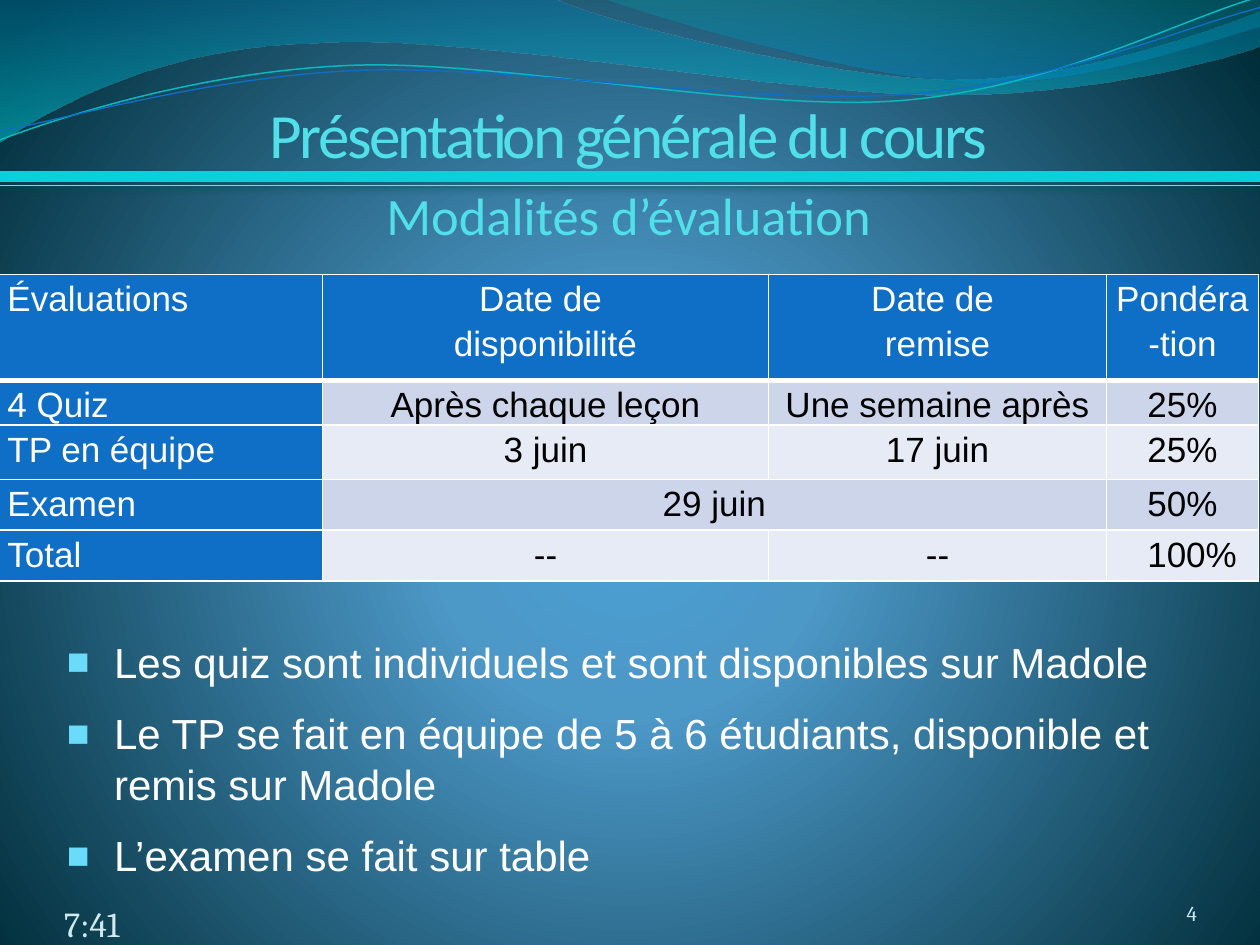
from lxml.etree import SubElement
from pptx import Presentation
from pptx.dml.color import RGBColor
from pptx.enum.shapes import MSO_CONNECTOR
from pptx.enum.text import MSO_ANCHOR as Anchor, MSO_AUTO_SIZE as AutoSize, PP_ALIGN as Align
from pptx.oxml.ns import qn
from pptx.util import Pt

WHITE = RGBColor(0xFF, 0xFF, 0xFF)
BLACK = RGBColor(0x00, 0x00, 0x00)
BLUE = RGBColor(0x0F, 0x6F, 0xC6)
BAND_DARK = RGBColor(0xCC, 0xD5, 0xEA)
BAND_LIGHT = RGBColor(0xE7, 0xEB, 0xF5)
TITLE = RGBColor(0x51, 0xE0, 0xEA)
FOOTER = RGBColor(0xD1, 0xEA, 0xEE)
BULLET = RGBColor(0x6B, 0xDB, 0xFA)
CYAN = RGBColor(0x0B, 0xD0, 0xD9)
PALE_CYAN = RGBColor(0x77, 0xD9, 0xE8)
TEAL = RGBColor(0x0A, 0xB8, 0xBF)
SHADOW = RGBColor(0x02, 0x4B, 0x4E)
SKY = RGBColor(0x4A, 0xA0, 0xD6)
SKY_MID = RGBColor(0x4C, 0x98, 0xC7)
NIGHT = RGBColor(0x00, 0x2C, 0x38)
WAVE_BLUE = RGBColor(0x00, 0x74, 0xA1)
WAVE_CYAN = RGBColor(0x00, 0xC6, 0xCF)
CREST_TEAL = RGBColor(0x00, 0xA1, 0xA9)
CREST_BLUE = RGBColor(0x00, 0x8B, 0xBF)

# Wave outlines in inches: two numbers make a straight step, six a Bézier curve.
WAVE = [(0, 0), (4.4, -0.01), (4.76, 0.17, 6.64, 0.63, 7.58, 0.63),
        (8.53, 0.63, 9.58, 0.26, 10, 0.09), (10.01, 0.36),
        (9.83, 0.44, 8.7, 0.76, 7.46, 0.75), (6.22, 0.75, 3.82, 0.28, 2.57, 0.34),
        (1.29, 0.36, 0.46, 0.83, -0.01, 1.13)]
CREST = [(4.79, -0.01), (5.09, 0.11, 6.82, 0.62, 7.69, 0.65),
         (8.56, 0.69, 9.61, 0.32, 10, 0.21), (10, 0)]
TEAL_CURVE = [(0, 1.11), (0.48, 0.93, 1.58, 0.57, 2.77, 0.52),
              (3.95, 0.47, 5.93, 0.89, 7.13, 0.8), (8.33, 0.71, 9.38, 0.15, 9.98, -0.02)]
BLUE_CURVE = [(0, 1.04), (0.47, 0.96, 1.64, 0.61, 2.83, 0.56),
              (4.03, 0.51, 5.97, 0.84, 7.17, 0.75), (8.36, 0.67, 9.41, 0.21, 10, 0.06)]

COLUMNS = [185, 255, 193, 87]
ROWS = [60.5, 25.5, 31, 29, 29]
CELLS = [
    ["Évaluations", "Date de \ndisponibilité", "Date de \nremise", "Pondéra-tion"],
    ["4 Quiz", "Après chaque leçon", "Une semaine après", "25%"],
    ["TP en équipe", "3 juin", "17 juin", "25%"],
    ["Examen", "29 juin", "", "50%"],
    ["Total", "--", "--", "100%"],
]
NOTES = ["Les quiz sont individuels et sont disponibles sur Madole",
         "Le TP se fait en équipe de 5 à 6 étudiants, disponible et remis sur Madole",
         "L’examen se fait sur table"]


def add_xml(parent, tag, **attributes):
    return SubElement(parent, qn(tag), {key: str(value) for key, value in attributes.items()})


def add_gradient(parent, stops):
    """Append a gradient of (position %, colour, opacity %) stops."""
    gradient = add_xml(parent, "a:gradFill", rotWithShape=1)
    stop_list = add_xml(gradient, "a:gsLst")
    for position, color, opacity in stops:
        stop = add_xml(stop_list, "a:gs", pos=position * 1000)
        add_xml(add_xml(stop, "a:srgbClr", val=color), "a:alpha", val=opacity * 1000)
    return gradient


def bend(shape, outline):
    """Join each three straight steps that stand for a curve into one Bézier step."""
    steps = iter(list(shape._element.iter(qn("a:lnTo"))))
    for part in outline[1:]:
        first = next(steps)
        if len(part) == 6:
            first.tag = qn("a:cubicBezTo")
            for step in (next(steps), next(steps)):
                first.append(step[0])
                step.getparent().remove(step)


def write_text(frame, text, *, size, font="Arial", color=WHITE, align=Align.LEFT,
               anchor=Anchor.TOP, line_spacing=None, tracking=None):
    """Write one paragraph per line of text."""
    frame.word_wrap = True
    frame.vertical_anchor = anchor
    for index, line in enumerate(text.split("\n")):
        para = frame.paragraphs[0] if index == 0 else frame.add_paragraph()
        para.alignment = align
        para.space_before = para.space_after = Pt(0)
        para.line_spacing = line_spacing
        span = para.add_run()
        span.text = line
        span.font.size, span.font.name = Pt(size), font
        span.font.color.rgb = color
        if tracking is not None:
            span.font._element.set("spc", str(round(tracking * 100)))


class SlideBuilder:
    def __init__(self, page):
        self.page = page

    def background(self, stops):
        self.page.background.fill.solid()
        properties = self.page._element.find(".//" + qn("p:bgPr"))
        gradient = add_gradient(properties, stops)
        focus = add_xml(gradient, "a:path", path="circle")
        add_xml(focus, "a:fillToRect", l=10000, t=110000, r=10000, b=100000)
        properties.replace(properties.find(qn("a:solidFill")), gradient)

    def _outline(self, outline, closed):
        points = [(Pt(part[i] * 72), Pt(part[i + 1] * 72))
                  for part in outline for i in range(0, len(part), 2)]
        builder = self.page.shapes.build_freeform(*points[0])
        builder.add_line_segments(points[1:], close=closed)
        shape = builder.convert_to_shape()
        bend(shape, outline)
        shape.shadow.inherit = False
        shape.fill.background()
        return shape

    def wave(self, outline, stops):
        shape = self._outline(outline, True)
        shape.line.fill.background()
        properties = shape._element.spPr
        gradient = add_gradient(properties, stops)
        add_xml(gradient, "a:lin", ang=5400000, scaled=1)
        properties.replace(properties.find(qn("a:noFill")), gradient)

    def curve(self, outline, color, width):
        line = self._outline(outline, False).line
        line.color.rgb, line.width = color, Pt(width)

    def rule(self, y, color, width, shadow=None):
        line = self.page.shapes.add_connector(MSO_CONNECTOR.STRAIGHT, 0, Pt(y), Pt(720), Pt(y))
        line.line.color.rgb, line.line.width = color, Pt(width)
        effects = add_xml(line._element.spPr, "a:effectLst")
        if shadow is not None:
            outer = add_xml(effects, "a:outerShdw", blurRad=Pt(4.5), dist=Pt(3),
                            dir=5400000, algn="t", rotWithShape=0)
            add_xml(add_xml(outer, "a:srgbClr", val=shadow), "a:alpha", val=48000)

    def place(self, box, left, top, width, height, margins=(0, 0, 0, 0)):
        box.left, box.top, box.width, box.height = map(Pt, (left, top, width, height))
        frame = box.text_frame
        frame.auto_size = AutoSize.NONE
        (frame.margin_left, frame.margin_top,
         frame.margin_right, frame.margin_bottom) = map(Pt, margins)
        return frame

    def title(self, text, area, **style):
        write_text(self.place(self.page.shapes.title, *area, (0, 0, 1.5, 0)), text, **style)

    def label(self, text, area, margins=(0, 0, 0, 0), **style):
        box = self.page.shapes.add_textbox(0, 0, 0, 0)
        write_text(self.place(box, *area, margins), text, anchor=Anchor.BOTTOM, **style)

    def bullets(self, items, area):
        frame = self.place(self.page.placeholders[1], *area, (7.2, 3.6, 7.2, 9))
        write_text(frame, "\n".join(items), size=24, anchor=Anchor.BOTTOM)
        for index, para in enumerate(frame.paragraphs):
            para.space_before = Pt(12 if index else 0)
            properties = para._p.get_or_add_pPr()
            properties.set("marL", str(Pt(27)))
            properties.set("indent", str(-Pt(27)))
            add_xml(add_xml(properties, "a:buClr"), "a:srgbClr", val=BULLET)
            add_xml(properties, "a:buSzPct", val=90000)
            add_xml(properties, "a:buFont", typeface="Arial")
            add_xml(properties, "a:buChar", char="■")

    def table(self, cells, left, top):
        table = self.page.shapes.add_table(len(ROWS), len(COLUMNS), Pt(left), Pt(top),
                                           Pt(sum(COLUMNS)), Pt(sum(ROWS))).table
        table.first_row = table.horz_banding = False
        for column, width in zip(table.columns, COLUMNS):
            column.width = Pt(width)
        for row, height in zip(table.rows, ROWS):
            row.height = Pt(height)
        table.cell(3, 1).merge(table.cell(3, 2))
        for r, texts in enumerate(cells):
            for c, text in enumerate(texts):
                self.cell(table.cell(r, c), text, r, c)
        table.cell(4, 3).margin_left = Pt(16)

    def cell(self, cell, text, r, c):
        heading = r == 0 or c == 0
        cell.margin_left = cell.margin_right = Pt(5)
        cell.margin_top = cell.margin_bottom = 0
        for side in "LRTB":
            thick = (r == 0 and side == "B") or (r == 1 and side == "T")
            border = add_xml(cell._tc.get_or_add_tcPr(), "a:ln" + side, w=Pt(3 if thick else 1))
            add_xml(add_xml(border, "a:solidFill"), "a:srgbClr", val=WHITE)
        cell.fill.solid()
        cell.fill.fore_color.rgb = BLUE if heading else BAND_DARK if r % 2 else BAND_LIGHT
        if text:
            write_text(cell.text_frame, text, size=20, color=WHITE if heading else BLACK,
                       align=Align.CENTER if c else Align.LEFT, line_spacing=1.15)


def main():
    deck = Presentation()
    deck.slide_width, deck.slide_height = Pt(720), Pt(540)
    slide = SlideBuilder(deck.slides.add_slide(deck.slide_layouts[1]))
    slide.background([(0, SKY, 100), (25, SKY_MID, 100), (100, NIGHT, 100)])
    slide.wave(WAVE, [(0, WAVE_BLUE, 45), (100, WAVE_CYAN, 55)])
    slide.wave(CREST, [(0, CREST_TEAL, 30), (80, CREST_BLUE, 45)])
    slide.curve(TEAL_CURVE, TEAL, 0.85)
    slide.curve(BLUE_CURVE, BLUE, 0.75)
    slide.bullets(NOTES, (31, 162, 663, 350))
    slide.label("4", (624, 500, 60, 29), size=12, font="Cambria", color=FOOTER,
                align=Align.RIGHT)
    slide.label("7:41", (36.5, 510.5, 168, 29), size=20, font="Cambria", color=FOOTER)
    heading = {"font": "Calibri", "color": TITLE, "align": Align.CENTER}
    slide.title("Présentation générale du cours", (0, 46, 720, 52), size=36,
                anchor=Anchor.BOTTOM, tracking=-1.5, **heading)
    slide.rule(101, CYAN, 6, shadow=SHADOW)
    slide.rule(106, PALE_CYAN, 0.75)
    slide.label("Modalités d’évaluation", (0, 88.5, 720, 52), (0, 0, 1.5, 0), size=30, **heading)
    slide.table(CELLS, -0.75, 156.75)
    deck.save("out.pptx")


if __name__ == "__main__":
    main()
